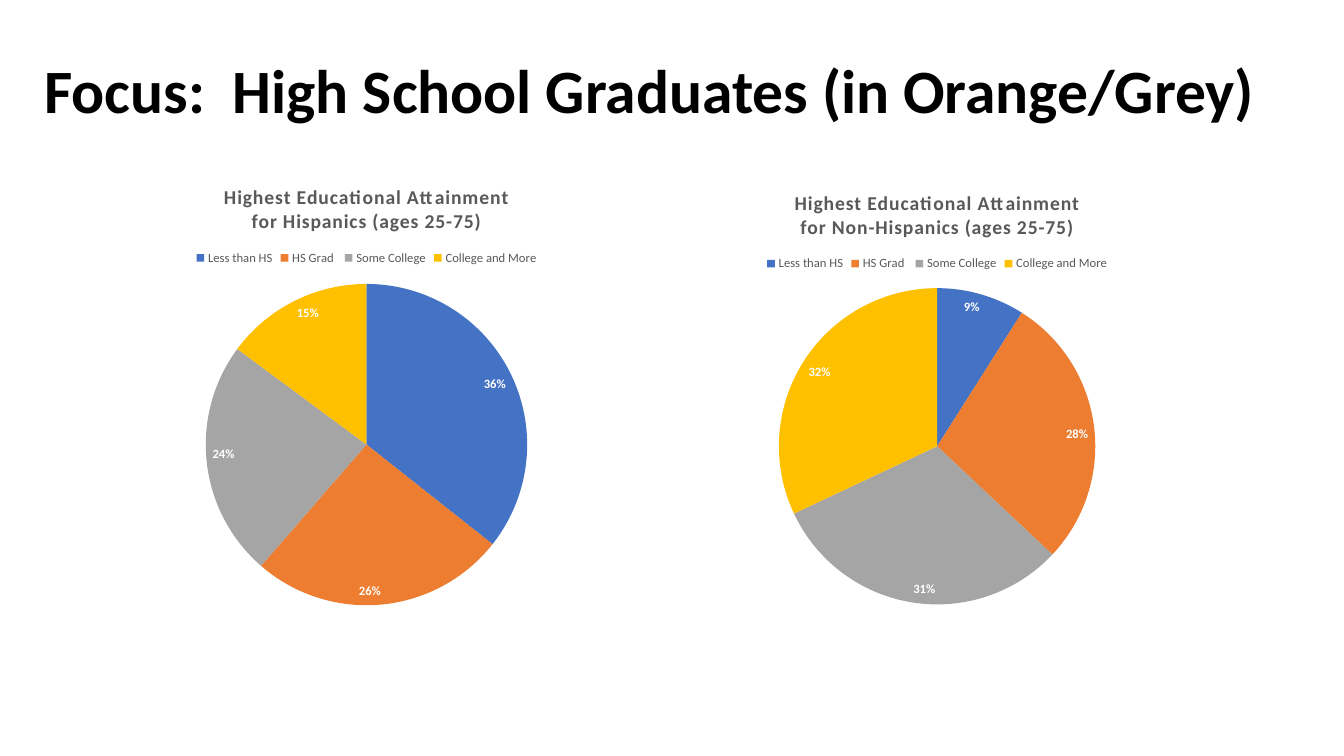
"""Slide with two pie charts comparing educational attainment."""
from lxml import etree
from pptx import Presentation
from pptx.chart.data import CategoryChartData
from pptx.dml.color import RGBColor
from pptx.enum.chart import XL_CHART_TYPE, XL_LABEL_POSITION, XL_LEGEND_POSITION
from pptx.enum.text import MSO_ANCHOR
from pptx.oxml import parse_xml
from pptx.util import Inches, Pt

PIE = XL_CHART_TYPE.PIE
INSIDE_END = XL_LABEL_POSITION.INSIDE_END
TOP = XL_LEGEND_POSITION.TOP
MIDDLE = MSO_ANCHOR.MIDDLE
C_NS = "http://schemas.openxmlformats.org/drawingml/2006/chart"

THEME = {
    "slices": ["4472C4", "ED7D31", "A5A5A5", "FFC000"],
    "heading": {"size": Pt(44), "bold": True, "color": "000000"},
    "base": {"size": Pt(10), "bold": False, "color": "000000"},
    "title": {"size": Pt(14), "bold": True, "color": "595959"},
    "legend": {"size": Pt(9), "bold": False, "color": "595959"},
    "label": {"size": Pt(9), "bold": True, "color": "FFFFFF"},
}
PIE_TOP, PIE_SIZE = 0.26, 0.71
LEVELS = ["Less than HS", "HS Grad ", "Some College", "College and More"]
CHARTS = [
    ("Hispanics", (0, 1.65, 7.27, 4.49), (36, 26, 24, 15)),
    ("Non-Hispanics", (5.33, 1.71, 7.93, 4.42), (9, 28, 31, 32)),
]


def style(font, role):
    """Apply the theme's format values for a role to a font."""
    font.name = "Calibri"
    for key, value in THEME[role].items():
        if key == "color":
            font.color.rgb = RGBColor.from_string(value)
        else:
            setattr(font, key, value)


prs = Presentation()
prs.slide_width, prs.slide_height = Inches(13.33), Inches(7.5)
s = prs.slides.add_slide(prs.slide_layouts[6])

for group, box, values in CHARTS:
    data = CategoryChartData(number_format="0")
    data.categories = LEVELS
    data.add_series("Series 1", values)
    chart = s.shapes.add_chart(PIE, *map(Inches, box), data).chart
    style(chart.font, "base")

    chart.has_title = True
    chart.chart_title.include_in_layout = False
    tf = chart.chart_title.text_frame
    tf.text = f"Highest Educational Attainment\nfor {group} (ages 25-75)"
    for p in tf.paragraphs:
        for r in p.runs:
            style(r.font, "title")
            r.font._element.set("spc", "50")

    chart.has_legend = True
    chart.legend.position = TOP
    chart.legend.include_in_layout = False
    style(chart.legend.font, "legend")

    plot = chart.plots[0]
    plot.vary_by_categories = True
    plot.has_data_labels = True
    labels = plot.data_labels
    style(labels.font, "label")
    label_format = {
        "show_percentage": True, "show_value": False, "position": INSIDE_END,
        "number_format": "0%", "number_format_is_linked": False,
    }
    for key, value in label_format.items():
        setattr(labels, key, value)

    for i, color in enumerate(THEME["slices"]):
        fmt = plot.series[0].points[i].format
        fmt.fill.solid()
        fmt.fill.fore_color.rgb = RGBColor.from_string(color)
        fmt.line.fill.background()

    width_share = PIE_SIZE * box[3] / box[2]
    layout = parse_xml(f'<c:layout xmlns:c="{C_NS}"/>')
    manual = etree.SubElement(layout, f"{{{C_NS}}}manualLayout")
    for tag, value in [
        ("layoutTarget", "inner"), ("xMode", "edge"), ("yMode", "edge"),
        ("x", (1 - width_share) / 2), ("y", PIE_TOP),
        ("w", width_share), ("h", PIE_SIZE),
    ]:
        etree.SubElement(manual, f"{{{C_NS}}}{tag}").set("val", str(value))
    area = chart._chartSpace.chart.plotArea
    for old in area.findall(f"{{{C_NS}}}layout"):
        area.remove(old)
    area.insert(0, layout)

sp = s.shapes.add_textbox(*map(Inches, (0.34, 0.2, 12.74, 1.45)))
tf = sp.text_frame
tf.word_wrap = True
tf.vertical_anchor = MIDDLE
p = tf.paragraphs[0]
p.line_spacing = 0.9
r = p.add_run()
r.text = "Focus:  High School Graduates (in Orange/Grey)"
style(r.font, "heading")

prs.save("out.pptx")
